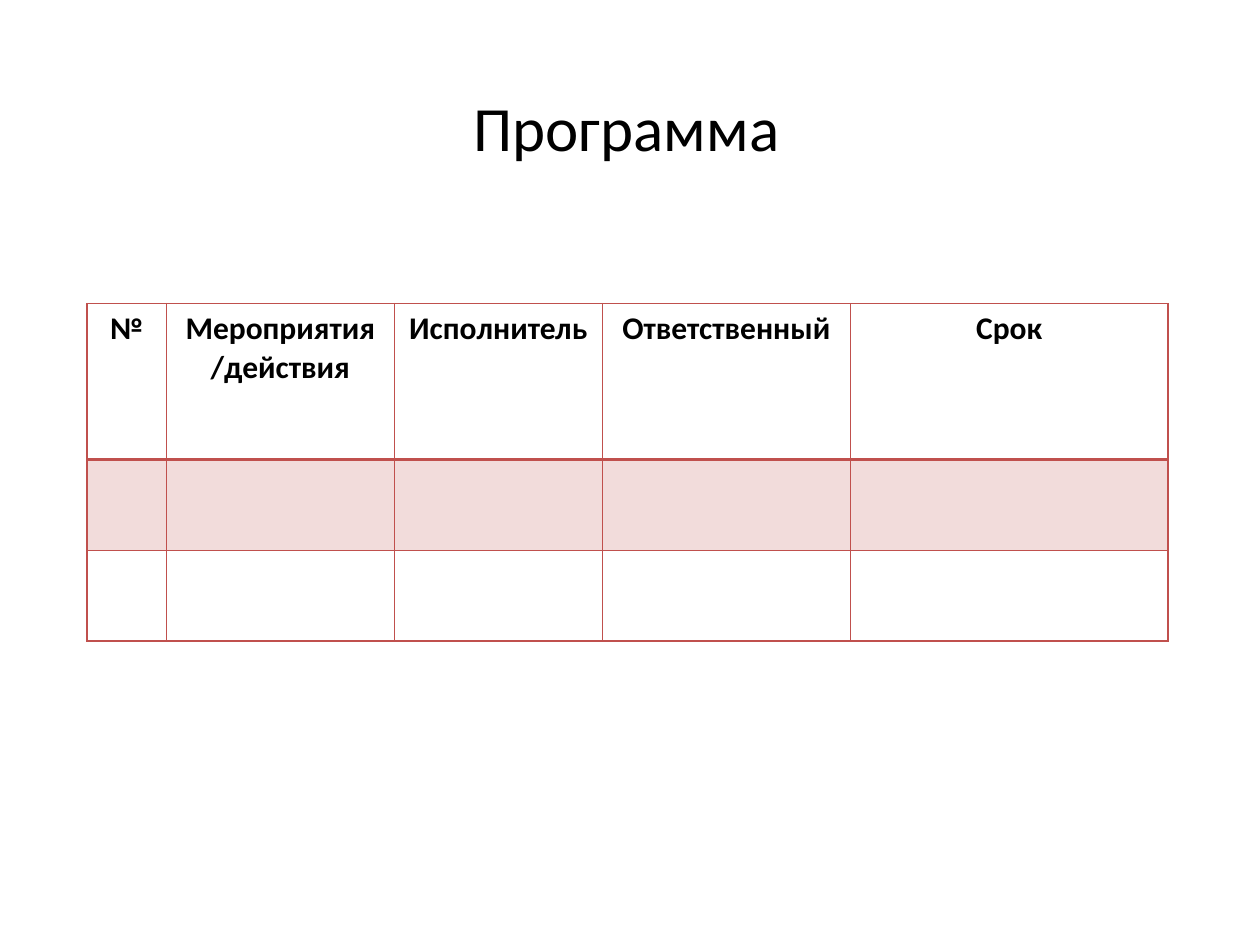
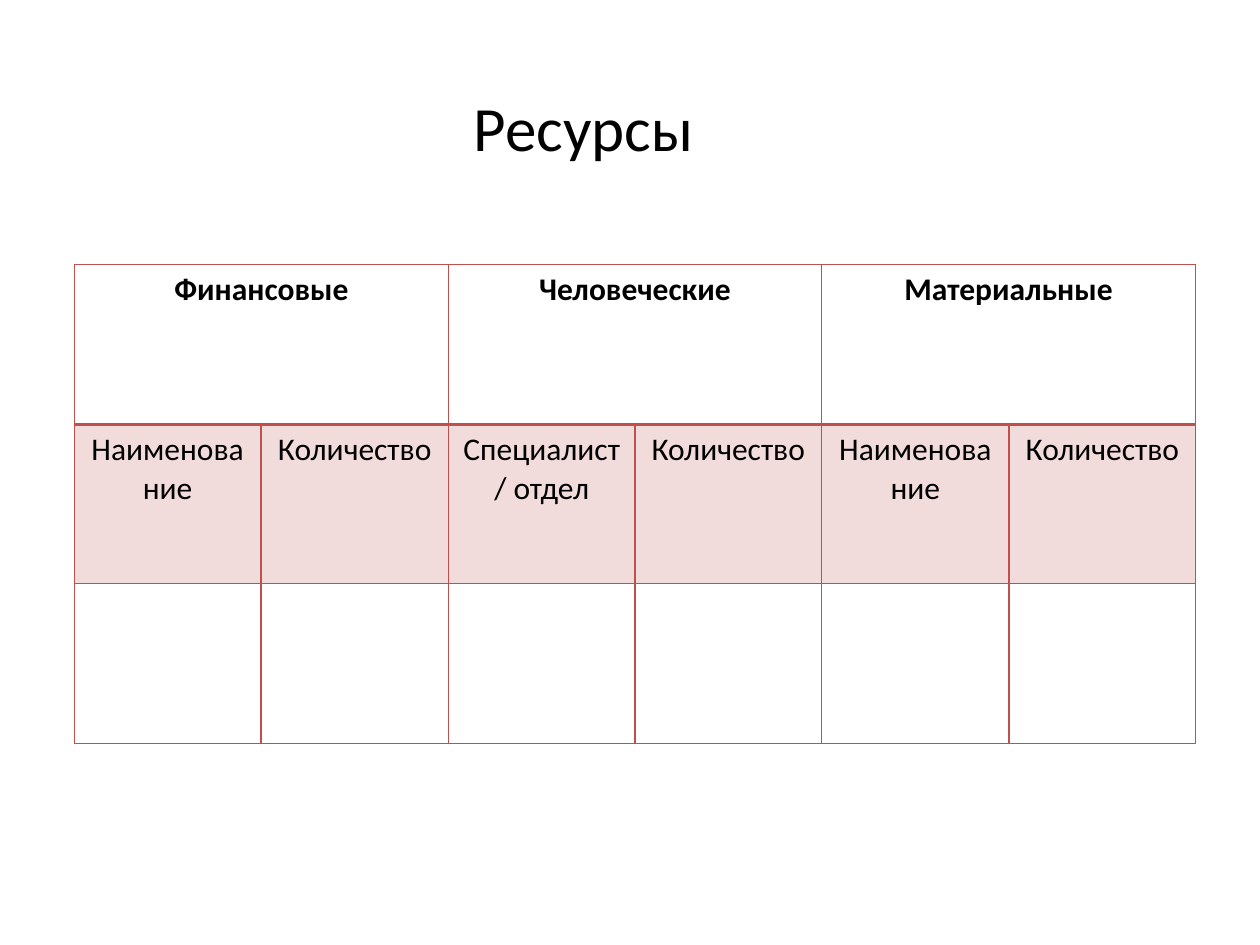
from dataclasses import dataclass

from lxml import etree
from pptx import Presentation
from pptx.dml.color import RGBColor
from pptx.enum.text import MSO_AUTO_SIZE, PP_ALIGN
from pptx.oxml.ns import qn
from pptx.util import Emu, Pt

CENTER = PP_ALIGN.CENTER
FIT_SHAPE = MSO_AUTO_SIZE.SHAPE_TO_FIT_TEXT
PX = 9144  # 100 px to the inch
BLANK = 6


@dataclass(frozen=True)
class Theme:
    font: str = "Calibri"
    ink: str = "000000"
    accent: str = "C0504D"
    band_alpha: int = 20
    title_size: int = 36
    cell_size: int = 18
    thin: int = 1
    thick: int = 2


THEME = Theme()


@dataclass(frozen=True)
class Box:
    left: int
    top: int
    width: int
    height: int

    def emu(self) -> list[Emu]:
        return [px(v) for v in (self.left, self.top, self.width, self.height)]


@dataclass(frozen=True)
class Grid:
    left: int
    top: int
    columns: list[int]
    rows: list[int]
    cells: list[list[str]]  # missing texts leave cells empty
    header_span: int = 1


@dataclass(frozen=True)
class Page:
    title: str
    title_box: Box
    grid: Grid


def px(value: int) -> Emu:
    return Emu(value * PX)


def split(total: int, count: int) -> list[int]:
    """Divide a length into whole parts that add up to it."""
    edges = [round(total * i / count) for i in range(count + 1)]
    return [end - start for start, end in zip(edges, edges[1:])]


# Text
def write(para, text: str, size: int, bold: bool = False) -> None:
    span = para.add_run()
    span.text = text
    formats = {"name": THEME.font, "size": Pt(size), "bold": bold}
    for name, value in formats.items():
        setattr(span.font, name, value)
    span.font.color.rgb = RGBColor.from_string(THEME.ink)


def draw_title(slide, text: str, box: Box) -> None:
    frame = slide.shapes.add_textbox(*box.emu()).text_frame
    for name, value in {"word_wrap": False, "auto_size": FIT_SHAPE}.items():
        setattr(frame, name, value)
    write(frame.paragraphs[0], text, THEME.title_size)


# Table
def add_color(parent, color: str):
    fill = etree.SubElement(parent, qn("a:solidFill"))
    return etree.SubElement(fill, qn("a:srgbClr"), val=color)


def style_cell(cell, row: int) -> None:
    properties = cell._tc.get_or_add_tcPr()
    widths = {"L": THEME.thin, "R": THEME.thin,
              "T": THEME.thick if row == 1 else THEME.thin,
              "B": THEME.thick if row == 0 else THEME.thin}
    for side, width in widths.items():
        line = etree.SubElement(properties, qn(f"a:ln{side}"), w=str(Pt(width)))
        add_color(line, THEME.accent)
    if row % 2:
        color = add_color(properties, THEME.accent)
        etree.SubElement(color, qn("a:alpha"), val=str(THEME.band_alpha * 1000))
    else:
        cell.fill.background()


def draw_grid(slide, grid: Grid) -> None:
    box = Box(grid.left, grid.top, sum(grid.columns), sum(grid.rows))
    table = slide.shapes.add_table(
        len(grid.rows), len(grid.columns), *box.emu()).table
    for name in ("first_row", "horz_banding"):
        setattr(table, name, False)
    for column, width in zip(table.columns, grid.columns):
        column.width = px(width)
    for row, height in zip(table.rows, grid.rows):
        row.height = px(height)
    for r in range(len(grid.rows)):
        for c in range(len(grid.columns)):
            style_cell(table.cell(r, c), r)

    # Header cells may cover several columns
    if grid.header_span > 1:
        for c in range(0, len(grid.columns), grid.header_span):
            table.cell(0, c).merge(table.cell(0, c + grid.header_span - 1))
    for r, texts in enumerate(grid.cells):
        step = grid.header_span if r == 0 else 1
        for i, text in enumerate(texts):
            para = table.cell(r, i * step).text_frame.paragraphs[0]
            para.alignment = CENTER
            write(para, text, THEME.cell_size, bold=r == 0)


# Content
PAGES = [
    Page("Программа", Box(366, 65, 265, 71), Grid(
        69, 241, [63, 181, 165, 197, 252], [124, 72, 72],
        [["№", "Мероприятия/действия", "Исполнитель", "Ответственный", "Срок"]])),
    Page("Ресурсы", Box(366, 65, 196, 71), Grid(
        59, 210, split(890, 6), split(380, 3),
        [["Финансовые", "Человеческие", "Материальные"],
         ["Наименование", "Количество", "Специалист/ отдел", "Количество",
          "Наименование", "Количество"]],
        header_span=2)),
]


def main() -> None:
    deck = Presentation()
    deck.slide_width, deck.slide_height = px(1000), px(750)
    for page in PAGES:
        slide = deck.slides.add_slide(deck.slide_layouts[BLANK])
        draw_title(slide, page.title, page.title_box)
        draw_grid(slide, page.grid)
    deck.save("out.pptx")


if __name__ == "__main__":
    main()
